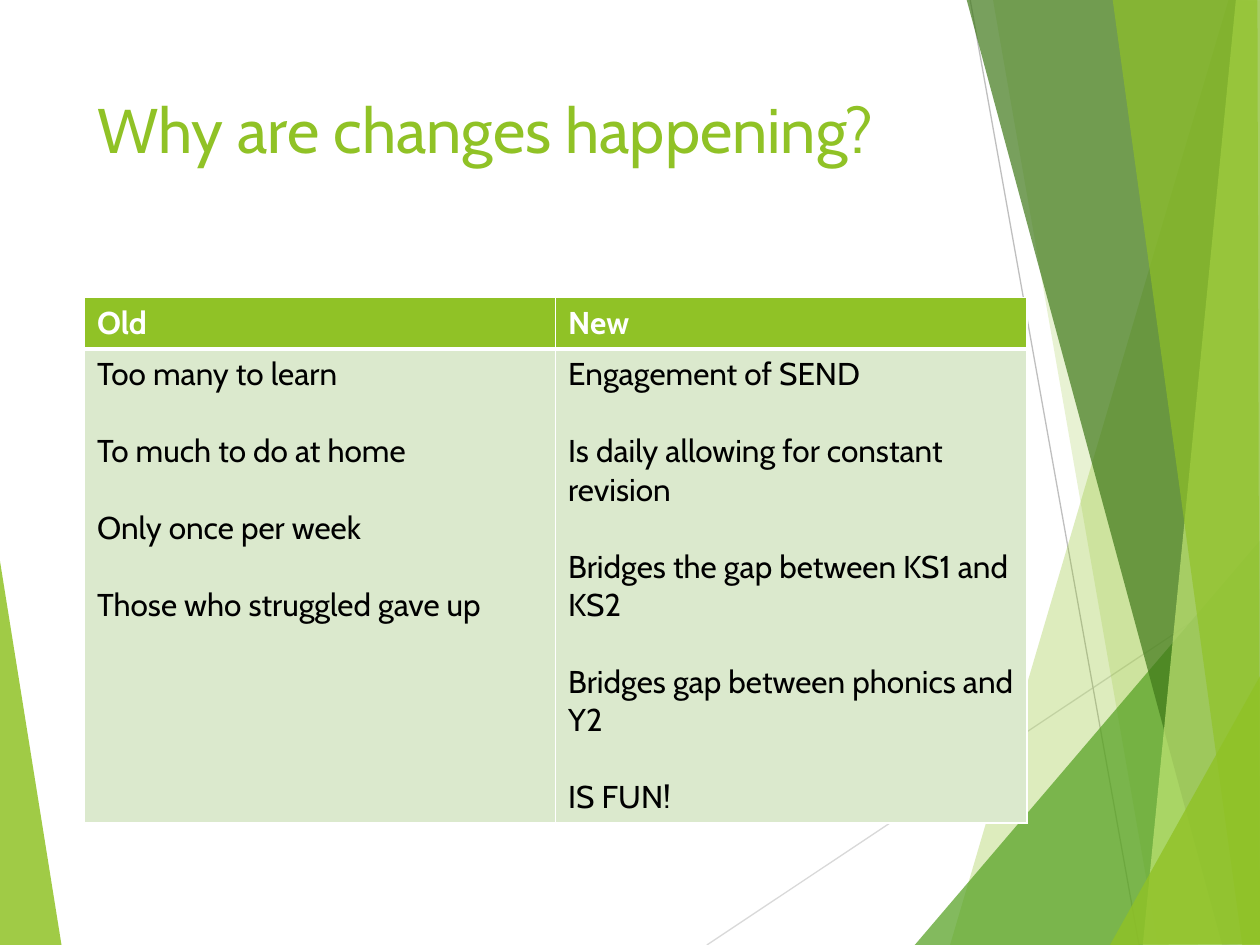
import pptx
import pptx.util
import pptx.dml.color
import pptx.enum.text
import pptx.enum.shapes
import pptx.oxml
import pptx.oxml.ns

Inches = pptx.util.Inches
Pt = pptx.util.Pt
RGBColor = pptx.dml.color.RGBColor
qn = pptx.oxml.ns.qn

FONT = "Cabin"
LIME = RGBColor(0x90, 0xC2, 0x26)
GREEN = RGBColor(0x54, 0xA0, 0x21)
DARK_GREEN = RGBColor(0x3F, 0x78, 0x19)
PALE_LIME = RGBColor(0xC0, 0xE4, 0x74)
CELL_GREEN = RGBColor(0xDB, 0xE9, 0xCD)
LIGHT_GREY = RGBColor(0xD9, 0xD9, 0xD9)
GREY = RGBColor(0xBF, 0xBF, 0xBF)
WHITE = RGBColor(0xFF, 0xFF, 0xFF)
BLACK = RGBColor(0, 0, 0)

LEFT_FACET = (LIME, 85, [(-0.01, 4.39), (0.49, 7.51), (-0.01, 7.5)])
RIGHT_FACETS = [
    (LIME, 30, [(9.75, 0), (7.54, 7.5), (10.02, 7.51), (10.01, 0.01)]),
    (LIME, 20, [(7.88, -0.01), (9.19, 7.5), (10.01, 7.5), (10.01, -0.01)]),
    (GREEN, 72, [(7.26, 7.5), (10, 4.29), (10.01, 7.5)]),
    (DARK_GREEN, 70, [(7.67, -0.01), (9.7, 7.5), (10.01, 7.49), (10.01, -0.01)]),
    (PALE_LIME, 70, [(9.81, -0.01), (9.07, 7.5), (10.01, 7.5), (10, -0.01)]),
    (LIME, 65, [(8.83, -0.01), (9.86, 7.5), (10, 7.5), (9.98, -0.01)]),
    (LIME, 80, [(8.81, 7.5), (10.01, 5.35), (10.01, 7.49)]),
]
COLUMNS = [
    ("Old", ["Too many to learn", "To much to do at home",
             "Only once per week", "Those who struggled gave up"]),
    ("New", ["Engagement of SEND", "Is daily allowing for constant revision",
             "Bridges the gap between KS1 and KS2",
             "Bridges gap between phonics and Y2", "IS FUN!"]),
]


def add_facet(page, color, opacity, points):
    corners = [(Inches(x), Inches(y)) for x, y in points]
    builder = page.shapes.build_freeform(*corners[0], scale=1.0)
    builder.add_line_segments(corners[1:], close=True)
    facet = builder.convert_to_shape()
    facet.shadow.inherit = False
    facet.fill.solid()
    facet.fill.fore_color.rgb = color
    facet.line.fill.background()
    color_element = facet.fill._xPr.find(qn("a:solidFill"))[0]
    alpha = pptx.oxml.parse_xml(
        f'<a:alpha {pptx.oxml.ns.nsdecls("a")} val="{opacity * 1000}"/>')
    color_element.append(alpha)


def add_thin_line(page, color, start, end):
    line = page.shapes.add_connector(
        pptx.enum.shapes.MSO_CONNECTOR.STRAIGHT,
        *(Inches(value) for value in start + end))
    line.line.color.rgb = color
    line.line.width = Pt(0.75)
    line._element.spPr.append(pptx.oxml.parse_xml(
        f'<a:effectLst {pptx.oxml.ns.nsdecls("a")}/>'))


def format_title(page, text):
    title = page.shapes.title
    title.left, title.top = Inches(0.67), Inches(0.67)
    title.width, title.height = Inches(6.94), Inches(1.44)
    frame = title.text_frame
    frame.text = text
    frame.word_wrap = True
    frame.vertical_anchor = pptx.enum.text.MSO_ANCHOR.TOP
    para = frame.paragraphs[0]
    para.alignment = pptx.enum.text.PP_ALIGN.LEFT
    style_font(para.font, 36, LIME)


def style_font(font, size, color, bold=False):
    font.name = FONT
    font.size = Pt(size)
    font.color.rgb = color
    font.bold = bold


def set_borders(cell, bottom_width):
    properties = cell._tc.get_or_add_tcPr()
    widths = {"lnL": 1, "lnR": 1, "lnT": 1, "lnB": bottom_width}
    for index, (side, width) in enumerate(widths.items()):
        properties.insert(index, pptx.oxml.parse_xml(
            f'<a:{side} {pptx.oxml.ns.nsdecls("a")} w="{Pt(width)}">'
            f'<a:solidFill><a:srgbClr val="{WHITE}"/></a:solidFill></a:{side}>'))


def fill_cell(cell, lines, fill, color, bold=False, bottom_width=1):
    cell.fill.solid()
    cell.fill.fore_color.rgb = fill
    set_borders(cell, bottom_width)
    cell.text = "\n".join(lines)
    for index, para in enumerate(cell.text_frame.paragraphs):
        style_font(para.font, 18, color, bold)
        if index:
            para.space_before = Pt(22)


def add_comparison(page):
    table = page.shapes.add_table(
        2, len(COLUMNS), Inches(0.67), Inches(2.36), Inches(7.48), Inches(4.16)).table
    table.rows[0].height = Inches(0.41)
    table.rows[1].height = Inches(3.75)
    for index, (heading, points) in enumerate(COLUMNS):
        fill_cell(table.cell(0, index), [heading], LIME, WHITE, True, 3)
        fill_cell(table.cell(1, index), points, CELL_GREEN, BLACK)


def main():
    deck = pptx.Presentation()
    deck.slide_width, deck.slide_height = Inches(10), Inches(7.5)
    page = deck.slides.add_slide(deck.slide_layouts[5])
    add_facet(page, *LEFT_FACET)
    add_thin_line(page, LIGHT_GREY, (5.61, 7.5), (10.01, 4.57))
    add_thin_line(page, GREY, (7.7, 0), (9.04, 7.5))
    for facet in RIGHT_FACETS:
        add_facet(page, *facet)
    format_title(page, "Why are changes happening?")
    add_comparison(page)
    deck.save("out.pptx")


if __name__ == "__main__":
    main()
